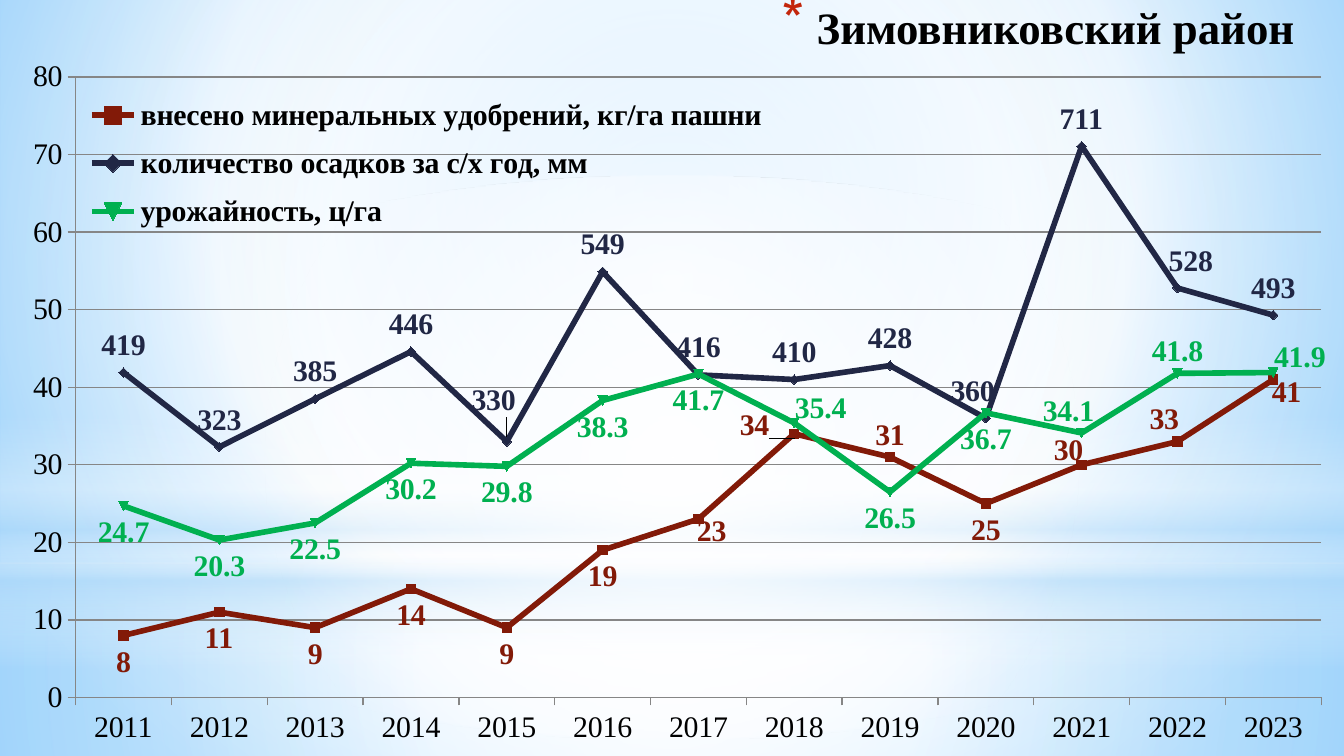
"""Build a slide charting fertilizer, rainfall and yield in Zimovnikovsky district."""
import lxml.etree
import pptx
import pptx.chart.data
import pptx.dml.color
import pptx.enum.chart
import pptx.enum.shapes
import pptx.enum.text
import pptx.oxml
import pptx.oxml.ns
import pptx.util

Inches = pptx.util.Inches
Pt = pptx.util.Pt
RGBColor = pptx.dml.color.RGBColor
LabelPosition = pptx.enum.chart.XL_LABEL_POSITION
Shape = pptx.enum.shapes.MSO_SHAPE
qn = pptx.oxml.ns.qn

BLACK = RGBColor(0x00, 0x00, 0x00)
WHITE = RGBColor(0xFF, 0xFF, 0xFF)
GRAY = RGBColor(0x86, 0x86, 0x86)
SKY = RGBColor(0x9E, 0xD5, 0xFF)
BLUE = RGBColor(0x5B, 0xB9, 0xFF)
HAZE = RGBColor(0xB4, 0xDC, 0xFA)
ORANGE = RGBColor(0xC3, 0x26, 0x0C)
RED = RGBColor(0x82, 0x1A, 0x08)
NAVY = RGBColor(0x21, 0x27, 0x45)
GREEN = RGBColor(0x00, 0xB0, 0x50)
FONT = "Times New Roman"
CHART_2012 = "http://schemas.microsoft.com/office/drawing/2012/chart"


def set_gradient(fill, parent, stops, center):
    """Fill with stops, radially around center or downwards without one."""
    fill.gradient()
    element = parent.find(".//" + qn("a:gradFill"))
    for child in list(element):
        element.remove(child)
    stop_list = lxml.etree.SubElement(element, qn("a:gsLst"))
    for place, color, opacity in stops:
        stop = lxml.etree.SubElement(stop_list, qn("a:gs"), pos=str(place * 1000))
        shade = lxml.etree.SubElement(stop, qn("a:srgbClr"), val=str(color))
        if opacity < 100:
            lxml.etree.SubElement(shade, qn("a:alpha"), val=str(opacity * 1000))
    if center:
        route = lxml.etree.SubElement(element, qn("a:path"), path="circle")
        sides = {side: str(share * 1000) for side, share in zip("ltrb", center)}
        lxml.etree.SubElement(route, qn("a:fillToRect"), **sides)
    else:
        lxml.etree.SubElement(element, qn("a:lin"), ang="5400000", scaled="0")


def set_layout(parent, index, values):
    """Give a chart part a manual layout."""
    for old in parent.findall(qn("c:layout")):
        parent.remove(old)
    layout = parent.makeelement(qn("c:layout"))
    manual = lxml.etree.SubElement(layout, qn("c:manualLayout"))
    for key, value in values.items():
        lxml.etree.SubElement(manual, qn("c:" + key), val=str(value))
    parent.insert(index, layout)


deck = pptx.Presentation()
deck.slide_width = Inches(10)
deck.slide_height = Inches(10) * 9 // 16
page = deck.slides.add_slide(deck.slide_layouts[6])

set_gradient(page.background.fill, page.background._cSld,
             [(0, SKY, 100), (60, WHITE, 100), (100, BLUE, 100)], (20, 10, 20, 60))

MIDDLE = (50, 50, 50, 50)
layers = [
    (Shape.RECTANGLE, 4.19, 1.44, MIDDLE, [(0, WHITE, 91), (37, WHITE, 76), (100, HAZE, 79)]),
    (Shape.RECTANGLE, 0, 4.19, MIDDLE, [(0, WHITE, 89), (48, WHITE, 62), (100, HAZE, 79)]),
    (Shape.RECTANGLE, 3.09, 1.88, None,
     [(0, WHITE, 0), (29, WHITE, 30), (45, HAZE, 40), (55, WHITE, 26), (65, HAZE, 60), (100, WHITE, 0)]),
    (Shape.OVAL, 1.31, 4.19, MIDDLE, [(0, WHITE, 100), (56, WHITE, 0)]),
]
for kind, top, height, center, stops in layers:
    layer = page.shapes.add_shape(kind, 0, Inches(top), Inches(10), Inches(height))
    layer.shadow.inherit = False
    layer.line.fill.background()
    set_gradient(layer.fill, layer._element.spPr, stops, center)

box = page.shapes.add_textbox(Inches(0.58), 0, Inches(9.12), Inches(0.57))
frame_format = {
    "word_wrap": True, "vertical_anchor": pptx.enum.text.MSO_ANCHOR.TOP,
    "margin_left": Inches(0.07), "margin_right": Inches(0.07),
    "margin_top": 0, "margin_bottom": Inches(0.04),
}
for key, value in frame_format.items():
    setattr(box.text_frame, key, value)
para = box.text_frame.paragraphs[0]
para.alignment = pptx.enum.text.PP_ALIGN.RIGHT
properties = para._p.get_or_add_pPr()
properties.set("marL", str(Inches(0.26)))
properties.set("indent", str(-Inches(0.26)))
bullet_color = lxml.etree.SubElement(properties, qn("a:buClr"))
lxml.etree.SubElement(bullet_color, qn("a:srgbClr"), val=str(ORANGE))
lxml.etree.SubElement(properties, qn("a:buSzPct"), val="128000")
lxml.etree.SubElement(properties, qn("a:buChar"), char="*")
span = para.add_run()
span.text = "Зимовниковский район"
for key, value in {"size": Pt(24), "name": FONT, "bold": True}.items():
    setattr(span.font, key, value)
span.font.color.rgb = BLACK

rainfall = [419, 323, 385, 446, 330, 549, 416, 410, 428, 360, 711, 528, 493]
measures = [
    ("внесено минеральных удобрений, кг/га пашни", RED, LabelPosition.BELOW, "#,##0",
     [8, 11, 9, 14, 9, 19, 23, 34, 31, 25, 30, 33, 41],
     {6: (0.01, -0.02), 7: (-0.03, -0.05), 8: (0, -0.07),
      10: (-0.01, -0.06), 11: (-0.01, -0.07), 12: (0.01, -0.02)}),
    ("количество осадков за с/х год, мм", NAVY, LabelPosition.ABOVE, "General",
     [amount / 10 for amount in rainfall],
     {4: (-0.01, -0.02), 9: (-0.01, 0), 11: (0.01, 0)}),
    ("урожайность, ц/га", GREEN, LabelPosition.BELOW, "General",
     [24.7, 20.3, 22.5, 30.2, 29.8, 38.3, 41.7, 35.4, 26.5, 36.7, 34.1, 41.8, 41.9],
     {7: (0.02, -0.06), 10: (-0.01, -0.07), 11: (0, -0.07), 12: (0.02, -0.06)}),
]
data = pptx.chart.data.CategoryChartData()
data.categories = [str(year) for year in range(2011, 2024)]
for name, color, position, number_format, values, offsets in measures:
    data.add_series(name, values)
chart = page.shapes.add_chart(
    pptx.enum.chart.XL_CHART_TYPE.LINE_MARKERS,
    Inches(0.07), Inches(0.42), Inches(9.86), Inches(5.13), data).chart
chart.has_title = False
for key, value in {"size": Pt(16), "name": FONT}.items():
    setattr(chart.font, key, value)
chart.font.color.rgb = BLACK

set_layout(chart._chartSpace.chart.plotArea, 0, {
    "layoutTarget": "inner", "xMode": "edge", "yMode": "edge",
    "x": 0.05, "y": 0.03, "w": 0.94, "h": 0.9})
chart.has_legend = True
chart.legend.position = pptx.enum.chart.XL_LEGEND_POSITION.BOTTOM
chart.legend.include_in_layout = True
chart.legend.font.bold = True
set_layout(chart.legend._element, 1, {
    "xMode": "edge", "yMode": "edge", "x": 0.05, "y": 0.04, "w": 0.53, "h": 0.23})

axis_format = {"minimum_scale": 0, "maximum_scale": 80, "major_unit": 10, "has_major_gridlines": True}
for key, value in axis_format.items():
    setattr(chart.value_axis, key, value)
chart.value_axis.tick_labels.number_format = "0"
chart.value_axis.tick_labels.number_format_is_linked = False
for axis in (chart.category_axis, chart.value_axis):
    axis.major_tick_mark = pptx.enum.chart.XL_TICK_MARK.OUTSIDE
for part in (chart.category_axis, chart.value_axis, chart.value_axis.major_gridlines):
    part.format.line.color.rgb = GRAY
    part.format.line.width = Pt(0.75)

plot = chart.plots[0]
plot.vary_by_categories = False
for series, (name, color, position, number_format, values, offsets) in zip(plot.series, measures):
    series.smooth = False
    series.format.line.color.rgb = color
    series.format.line.width = Pt(3)
    series.marker.size = 5
    series.marker.format.fill.solid()
    series.marker.format.fill.fore_color.rgb = color
    series.marker.format.line.color.rgb = color
    label_format = {"show_value": True, "position": position, "number_format": number_format,
                    "number_format_is_linked": False}
    for key, value in label_format.items():
        setattr(series.data_labels, key, value)
    fonts = [series.data_labels.font]
    custom = range(len(values)) if color == NAVY else offsets
    for index in custom:
        label = series.points[index].data_label
        if color == NAVY:
            span = label.text_frame.paragraphs[0].add_run()
            span.text = str(rainfall[index])
            fonts.append(span.font)
        else:
            fonts.append(label.font)
        label.position = position
        if index in offsets:
            element = series._element.xpath(f'.//c:dLbl[c:idx/@val="{index}"]')[0]
            set_layout(element, 1, dict(zip("xy", offsets[index])))
    for font in fonts:
        for key, value in {"size": Pt(16), "name": FONT, "bold": True}.items():
            setattr(font, key, value)
        font.color.rgb = color
    extensions = lxml.etree.SubElement(series.data_labels._element, qn("c:extLst"))
    extension = lxml.etree.SubElement(extensions, qn("c:ext"), nsmap={"c15": CHART_2012},
                                      uri="{CE6537A1-D6FC-4f65-9D91-7224C49458BB}")
    lxml.etree.SubElement(extension, f"{{{CHART_2012}}}showLeaderLines", val="0")

deck.save("out.pptx")
